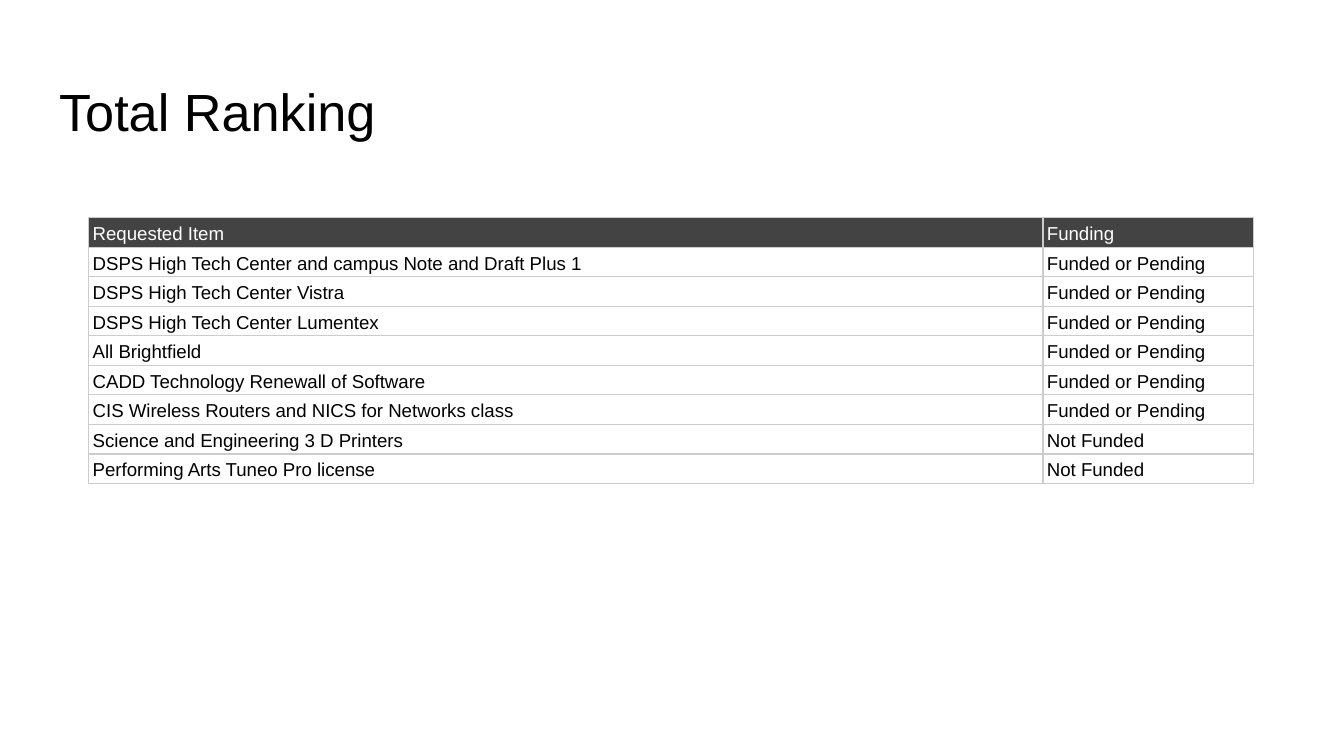
"""Build a slide that lists requested items and their funding."""
from dataclasses import dataclass

from pptx import Presentation
from pptx.dml.color import RGBColor as Rgb
from pptx.enum.text import MSO_ANCHOR as Anchor, PP_ALIGN as Align
from pptx.oxml import parse_xml
from pptx.oxml.ns import nsdecls
from pptx.util import Inches, Pt


@dataclass(frozen=True)
class Theme:
    """Hold the colours, font and type sizes."""
    font: str = "Arial"
    ink: str = "000000"
    paper: str = "FFFFFF"
    header: str = "434343"
    rule: str = "CCCCCC"
    rule_width: float = 0.75
    title_size: float = 28
    cell_size: float = 10
    line_spacing: float = 1.15


THEME = Theme()
SLIDE_WIDTH = 10
SLIDE_SIZE = (SLIDE_WIDTH, SLIDE_WIDTH * 9 / 16)
TITLE_BOX = (0.34, 0.49, 9.32, 0.63)
TABLE_ORIGIN = (0.66, 1.62)
COLUMN_WIDTHS = (7.1, 1.57)
ROW_HEIGHT = 0.22
HEADINGS = ("Requested Item", "Funding")
FUNDED_ITEMS = (
    "DSPS High Tech Center and campus Note and Draft Plus 1",
    "DSPS High Tech Center Vistra",
    "DSPS High Tech Center Lumentex",
    "All Brightfield",
    "CADD Technology Renewall of Software",
    "CIS Wireless Routers and NICS for Networks class",
)
UNFUNDED_ITEMS = (
    "Science and Engineering 3 D Printers",
    "Performing Arts Tuneo Pro license",
)


def style_paragraph(para, size, color):
    """Set the font and left alignment of a paragraph."""
    para.alignment = Align.LEFT
    para.font.name = THEME.font
    para.font.size = Pt(size)
    para.font.color.rgb = Rgb.from_string(color)


def set_title(page, text):
    """Place and format the title placeholder."""
    title = page.shapes.title
    title.left, title.top, title.width, title.height = map(Inches, TITLE_BOX)
    frame = title.text_frame
    frame.text = text
    frame.vertical_anchor = Anchor.TOP
    frame.margin_left = frame.margin_right = Inches(0.1)
    frame.margin_top = frame.margin_bottom = Inches(0.1)
    style_paragraph(frame.paragraphs[0], THEME.title_size, THEME.ink)


def add_borders(cell):
    """Draw a thin rule on all four sides of a cell."""
    properties = cell._tc.get_or_add_tcPr()
    for side in ("lnL", "lnR", "lnT", "lnB"):
        properties.append(parse_xml(
            f'<a:{side} {nsdecls("a")} w="{Pt(THEME.rule_width)}"><a:solidFill>'
            f'<a:srgbClr val="{THEME.rule}"/></a:solidFill></a:{side}>'))


def fill_cell(cell, text, is_header):
    """Write and format one table cell."""
    cell.text = text
    cell.vertical_anchor = Anchor.BOTTOM
    cell.margin_left = cell.margin_right = Inches(0.03)
    cell.margin_top = cell.margin_bottom = Inches(0.02)
    para = cell.text_frame.paragraphs[0]
    para.line_spacing = THEME.line_spacing
    style_paragraph(para, THEME.cell_size, THEME.paper if is_header else THEME.ink)
    add_borders(cell)
    if is_header:
        cell.fill.solid()
        cell.fill.fore_color.rgb = Rgb.from_string(THEME.header)
    else:
        cell.fill.background()


def add_funding_table(page, rows):
    """Add the table with a header row and one row per item."""
    size = (sum(COLUMN_WIDTHS), ROW_HEIGHT * len(rows))
    table = page.shapes.add_table(
        len(rows), len(COLUMN_WIDTHS), *map(Inches, TABLE_ORIGIN + size)).table
    table.first_row = table.horz_banding = False
    for column, width in zip(table.columns, COLUMN_WIDTHS):
        column.width = Inches(width)
    for row_number, texts in enumerate(rows):
        table.rows[row_number].height = Inches(ROW_HEIGHT)
        for cell, text in zip(table.rows[row_number].cells, texts):
            fill_cell(cell, text, row_number == 0)


def main():
    """Build and save the deck."""
    deck = Presentation()
    deck.slide_width, deck.slide_height = map(Inches, SLIDE_SIZE)
    page = deck.slides.add_slide(deck.slide_layouts[5])
    set_title(page, "Total Ranking")
    funded = [(item, "Funded or Pending") for item in FUNDED_ITEMS]
    unfunded = [(item, "Not Funded") for item in UNFUNDED_ITEMS]
    add_funding_table(page, [HEADINGS, *funded, *unfunded])
    deck.save("out.pptx")


if __name__ == "__main__":
    main()
